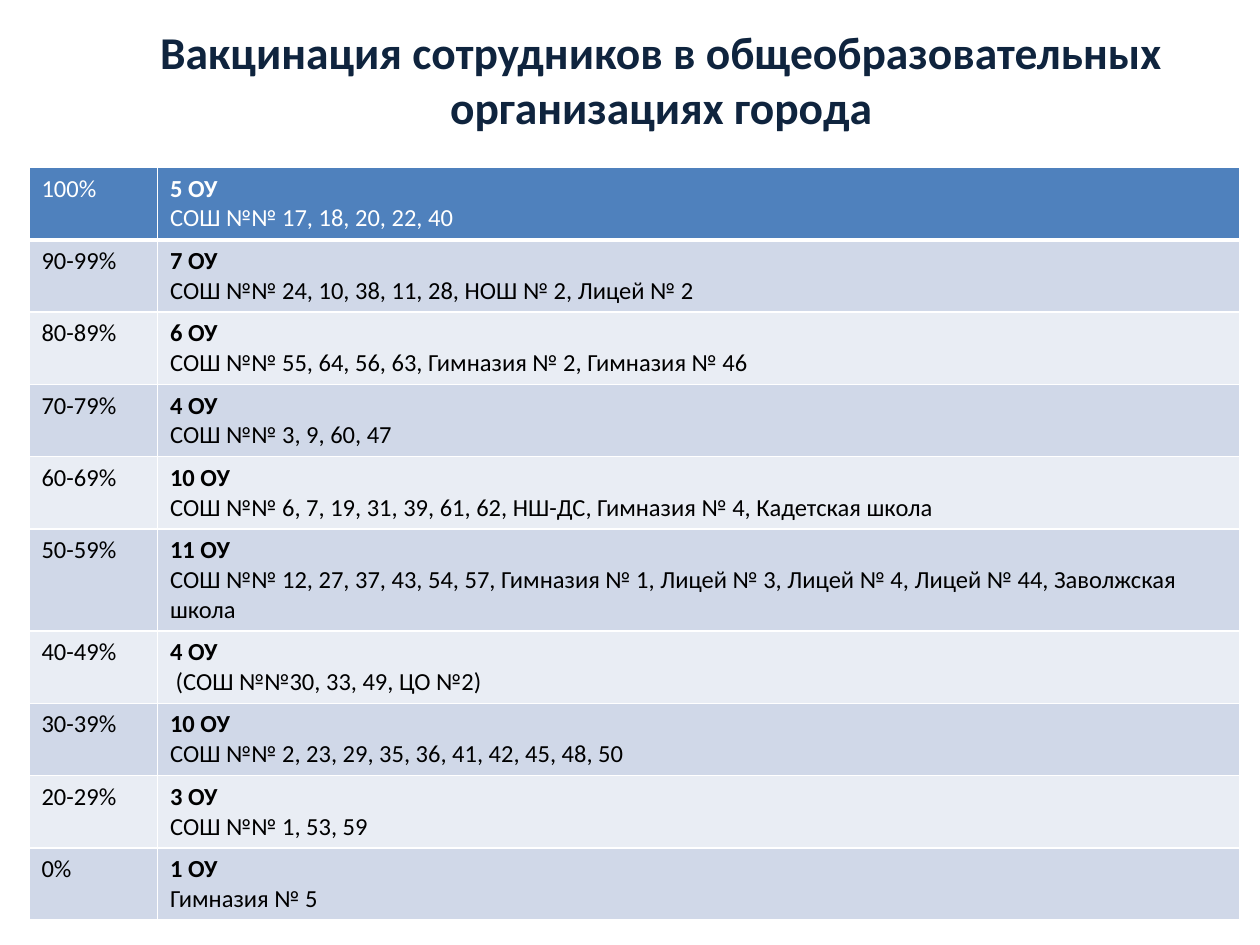
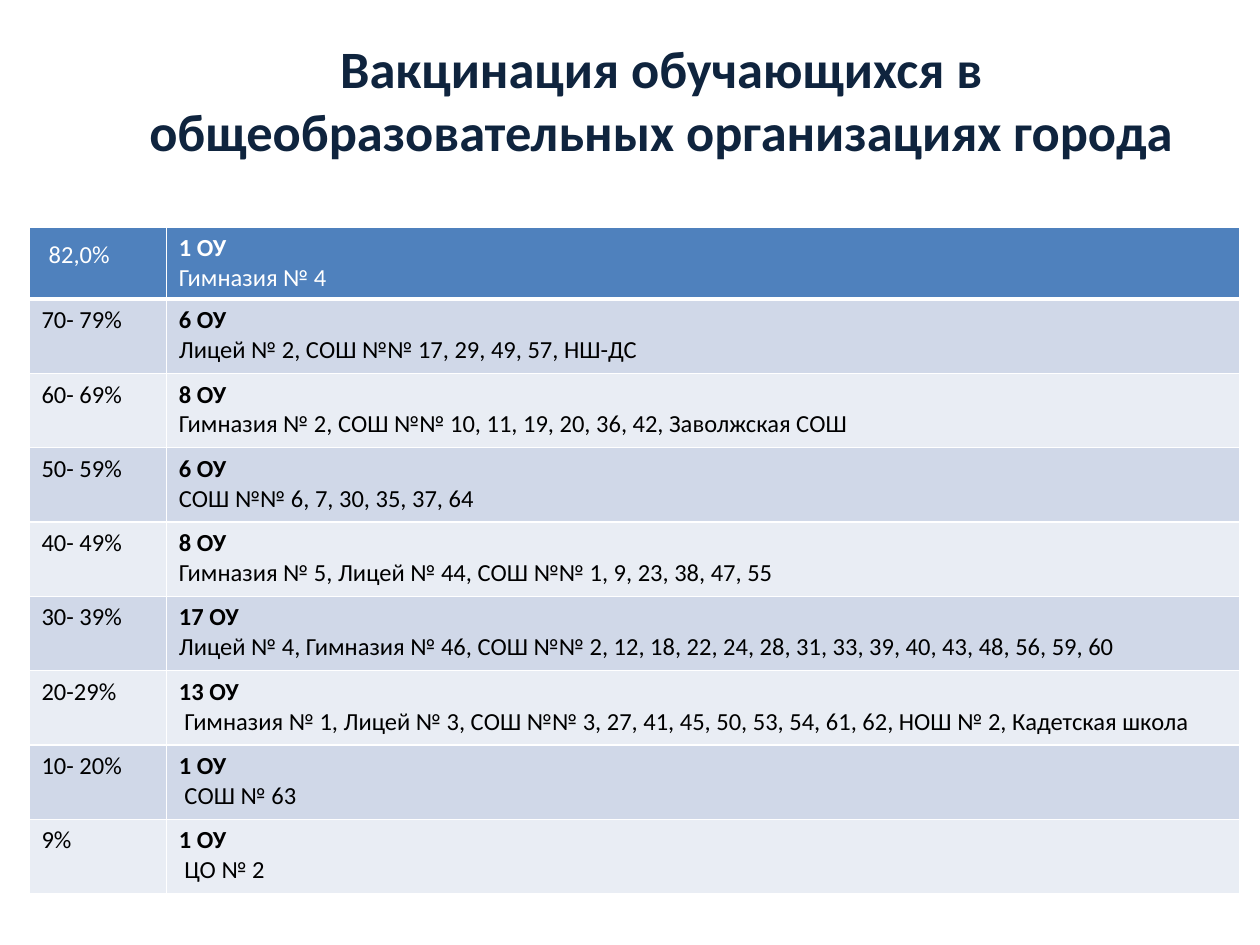
"""Build two slides with tables of vaccination levels in city schools."""
from lxml import etree
from pptx import Presentation
from pptx.dml.color import RGBColor
from pptx.enum.text import MSO_ANCHOR, MSO_AUTO_SIZE, PP_ALIGN
from pptx.oxml.ns import qn
from pptx.util import Inches, Pt

CENTER, LEFT = PP_ALIGN.CENTER, PP_ALIGN.LEFT
MIDDLE = MSO_ANCHOR.MIDDLE
NO_AUTOFIT = MSO_AUTO_SIZE.NONE

FONT = "Calibri"
NAVY, WHITE, BLACK = "0F243E", "FFFFFF", "000000"
HEADER_FILL = "4F81BD"
BAND_FILLS = ("E9EDF4", "D0D8E8")
TEXT_SIZE, LEAD_SIZE = 14, 18
THIN, THICK = 1, 3
TITLE_LEFT, TITLE_WIDTH, TITLE_HEIGHT = 0.5, 9.5, 1.25
TABLE_LEFT, TABLE_WIDTH = 0.23, 9.61

SLIDES = [
    {
        "title": "Вакцинация сотрудников в общеобразовательных организациях города",
        "title_size": 26, "title_top": 0,
        "table_top": 1.33, "level_width": 1.02,
        "row_height": 0.56, "special_heights": {5: 0.79},
        "rows": [
            ("100%", "5 ОУ", "СОШ №№ 17, 18, 20, 22, 40"),
            ("90-99%", "7 ОУ", "СОШ №№ 24, 10, 38, 11, 28, НОШ № 2, Лицей № 2"),
            ("80-89%", "6 ОУ", "СОШ №№ 55, 64, 56, 63, Гимназия № 2, Гимназия № 46"),
            ("70-79%", "4 ОУ", "СОШ №№ 3, 9, 60, 47"),
            ("60-69%", "10 ОУ", "СОШ №№ 6, 7, 19, 31, 39, 61, 62, НШ-ДС, Гимназия № 4, "
                                "Кадетская школа"),
            ("50-59%", "11 ОУ", "СОШ №№ 12, 27, 37, 43, 54, 57, Гимназия № 1, Лицей № 3, "
                                "Лицей № 4, Лицей № 44, Заволжская школа"),
            ("40-49%", "4 ОУ", " (СОШ №№30, 33, 49, ЦО №2)"),
            ("30-39%", "10 ОУ", "СОШ №№ 2, 23, 29, 35, 36, 41, 42, 45, 48, 50"),
            ("20-29%", "3 ОУ", "СОШ №№ 1, 53, 59"),
            ("0%", "1 ОУ", "Гимназия № 5"),
        ],
    },
    {
        "title": "Вакцинация обучающихся в общеобразовательных организациях города",
        "title_size": 30, "title_top": 0.16,
        "table_top": 1.8, "level_width": 1.09,
        "row_height": 0.59, "special_heights": {0: 0.56},
        "rows": [
            (" 82,0%", "1 ОУ", "Гимназия № 4"),
            ("70- 79%", "6 ОУ", "Лицей № 2, СОШ №№ 17, 29, 49, 57, НШ-ДС"),
            ("60- 69%", "8 ОУ", "Гимназия № 2, СОШ №№ 10, 11, 19, 20, 36, 42, "
                                "Заволжская СОШ"),
            ("50- 59%", "6 ОУ", "СОШ №№ 6, 7, 30, 35, 37, 64"),
            ("40- 49%", "8 ОУ", "Гимназия № 5, Лицей № 44, СОШ №№ 1, 9, 23, 38, 47, 55"),
            ("30- 39%", "17 ОУ", "Лицей № 4, Гимназия № 46, СОШ №№ 2, 12, 18, 22, 24, 28, "
                                 "31, 33, 39, 40, 43, 48, 56, 59, 60"),
            ("20-29%", "13 ОУ", " Гимназия № 1, Лицей № 3, СОШ №№ 3, 27, 41, 45, 50, 53, "
                                "54, 61, 62, НОШ № 2, Кадетская школа"),
            ("10- 20%", "1 ОУ", " СОШ № 63"),
            ("9%", "1 ОУ", " ЦО № 2"),
        ],
    },
]


def rgb(value):
    return RGBColor.from_string(value)


def write(paragraph, text, size=TEXT_SIZE, color=BLACK, bold=False, align=LEFT):
    paragraph.alignment = align
    run = paragraph.add_run()
    run.text = text
    run.font.name = FONT
    run.font.size = Pt(size)
    run.font.bold = bold
    run.font.color.rgb = rgb(color)


def set_borders(cell, top, bottom):
    properties = cell._tc.get_or_add_tcPr()
    widths = {"a:lnL": THIN, "a:lnR": THIN, "a:lnT": top, "a:lnB": bottom}
    for position, (tag, width) in enumerate(widths.items()):
        line = etree.Element(qn(tag), w=str(Pt(width)))
        fill = etree.SubElement(line, qn("a:solidFill"))
        etree.SubElement(fill, qn("a:srgbClr"), val=WHITE)
        properties.insert(position, line)


def add_title(slide, content):
    title = slide.shapes.title
    title.left, title.top = Inches(TITLE_LEFT), Inches(content["title_top"])
    title.width, title.height = Inches(TITLE_WIDTH), Inches(TITLE_HEIGHT)
    frame = title.text_frame
    frame.word_wrap = True
    frame.auto_size = NO_AUTOFIT
    frame.vertical_anchor = MIDDLE
    write(frame.paragraphs[0], content["title"], size=content["title_size"],
          color=NAVY, bold=True, align=CENTER)


def fill_row(cells, row, index):
    is_header = index == 0
    color = WHITE if is_header else BLACK
    for cell in cells:
        cell.fill.solid()
        cell.fill.fore_color.rgb = rgb(HEADER_FILL if is_header else BAND_FILLS[index % 2])
        set_borders(cell, top=THICK if index == 1 else THIN,
                    bottom=THICK if is_header else THIN)
    level, count, schools = row
    level_cell, school_cell = cells
    paragraph = level_cell.text_frame.paragraphs[0]
    if level.startswith(" "):
        write(paragraph, " ", size=LEAD_SIZE, color=color, bold=True)
    write(paragraph, level.lstrip(), color=color)
    frame = school_cell.text_frame
    write(frame.paragraphs[0], count, color=color, bold=True)
    write(frame.add_paragraph(), schools, color=color)


def add_level_table(slide, content):
    rows = content["rows"]
    heights = [content["special_heights"].get(index, content["row_height"])
               for index in range(len(rows))]
    table = slide.shapes.add_table(
        len(rows), 2, Inches(TABLE_LEFT), Inches(content["table_top"]),
        Inches(TABLE_WIDTH), Inches(sum(heights))).table
    table.columns[0].width = Inches(content["level_width"])
    table.columns[1].width = Inches(TABLE_WIDTH - content["level_width"])
    for index, (row, height) in enumerate(zip(rows, heights)):
        table.rows[index].height = Inches(height)
        fill_row(table.rows[index].cells, row, index)


def main():
    presentation = Presentation()
    presentation.slide_width, presentation.slide_height = Inches(10), Inches(7.5)
    title_only = presentation.slide_layouts.get_by_name("Title Only")
    for content in SLIDES:
        slide = presentation.slides.add_slide(title_only)
        add_title(slide, content)
        add_level_table(slide, content)
    presentation.save("out.pptx")


if __name__ == "__main__":
    main()
